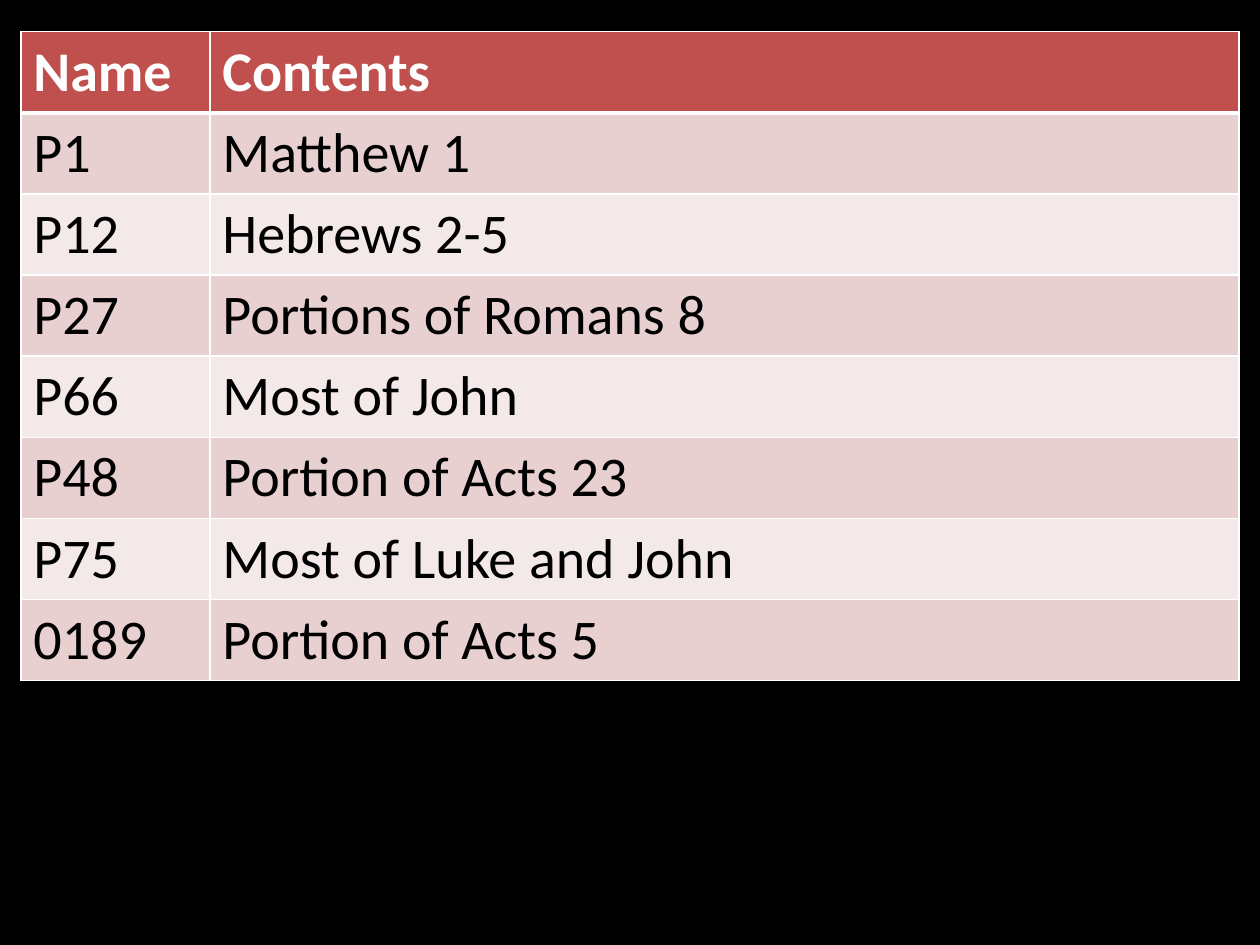
from dataclasses import dataclass

from lxml import etree
from pptx import Presentation
from pptx.dml.color import RGBColor
from pptx.oxml import ns
from pptx.util import Cm, Pt


@dataclass(frozen=True)
class Theme:
    background: str = "000000"
    header: str = "C0504D"
    bands: tuple = ("E8D0D0", "F4E9E9")
    header_text: str = "FFFFFF"
    body_text: str = "000000"
    border: str = "FFFFFF"
    font: str = "Calibri"
    size: int = 32
    thin: int = 1
    thick: int = 3


THEME = Theme()

MANUSCRIPTS = [
    ("Name", "Contents"),
    ("P1", "Matthew 1"),
    ("P12", "Hebrews 2-5"),
    ("P27", "Portions of Romans 8"),
    ("P66", "Most of John"),
    ("P48", "Portion of Acts 23"),
    ("P75", "Most of Luke and John"),
    ("0189", "Portion of Acts 5"),
]


def paint(fill, color):
    fill.solid()
    fill.fore_color.rgb = RGBColor.from_string(color)


def write(frame, text, color=THEME.body_text, bold=False):
    run = frame.paragraphs[0].add_run()
    run.text = text
    run.font.name = THEME.font
    run.font.size = Pt(THEME.size)
    run.font.bold = bold
    run.font.color.rgb = RGBColor.from_string(color)


def set_borders(cell, **widths):
    """Draw the sides L, R, T and B, given in schema order, at widths in points."""
    properties = cell._tc.get_or_add_tcPr()
    for position, (side, width) in enumerate(widths.items()):
        line = etree.Element(ns.qn(f"a:ln{side}"), w=str(Pt(width)))
        solid = etree.SubElement(line, ns.qn("a:solidFill"))
        etree.SubElement(solid, ns.qn("a:srgbClr"), val=THEME.border)
        properties.insert(position, line)


def add_manuscript_table(slide, left, top, width, height, name_width):
    table = slide.shapes.add_table(
        len(MANUSCRIPTS), 2, left, top, width, height).table
    table.columns[0].width = name_width
    table.columns[1].width = width - name_width

    for row, entry in enumerate(MANUSCRIPTS):
        is_header = row == 0
        fill = THEME.header if is_header else THEME.bands[(row - 1) % 2]
        color = THEME.header_text if is_header else THEME.body_text
        for column, text in enumerate(entry):
            cell = table.cell(row, column)
            paint(cell.fill, fill)
            write(cell.text_frame, text, color=color, bold=is_header)
            set_borders(cell, L=THEME.thin, R=THEME.thin,
                        T=THEME.thick if row == 1 else THEME.thin,
                        B=THEME.thick if is_header else THEME.thin)


def main():
    deck = Presentation()
    deck.slide_width, deck.slide_height = Cm(25.4), Cm(19.05)
    slide = deck.slides.add_slide(deck.slide_layouts[6])
    paint(slide.background.fill, THEME.background)
    add_manuscript_table(slide, Cm(0.42), Cm(0.64), Cm(24.56), Cm(12.88),
                         name_width=Cm(3.81))
    deck.save("out.pptx")


if __name__ == "__main__":
    main()
